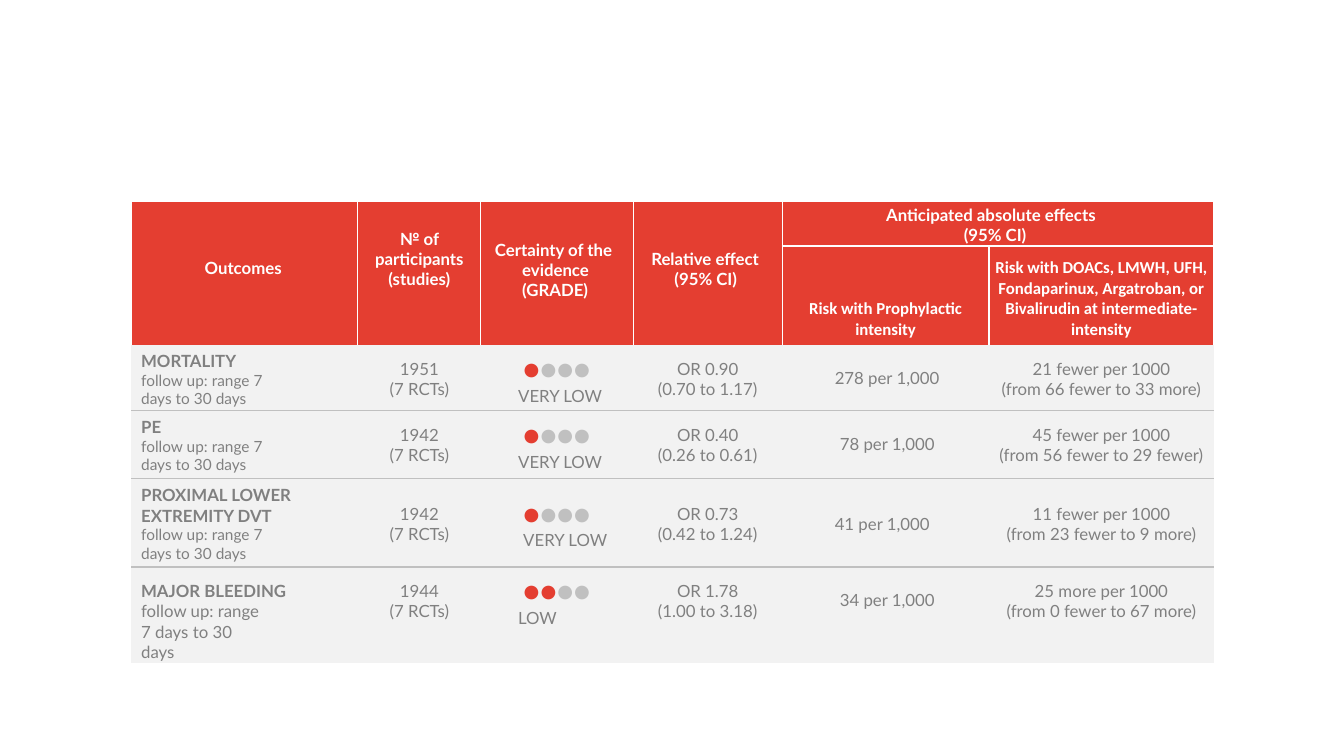
from dataclasses import dataclass
from typing import Optional

from lxml.etree import SubElement
from pptx import Presentation
from pptx.dml.color import RGBColor
from pptx.enum.text import MSO_ANCHOR as Anchor, PP_ALIGN as Align
from pptx.oxml.ns import qn
from pptx.table import Table, _Cell as Cell
from pptx.util import Inches, Pt

COLORS = {"white": "FFFFFF", "red": "E43E31", "band": "F2F2F2",
          "text": "808080", "rule": "C0C0C0"}
SLIDE_WIDTH, SLIDE_HEIGHT = Inches(13.33), Inches(7.5)
TABLE_LEFT, TABLE_TOP = 9.75, 26.67
COLUMN_SHARES = (16.88, 9.15, 11.33, 11.1, 15.38, 16.73)
ROW_SHARES = (5.87, 13.07, 8.73, 8.93, 11.73, 12.67)
NO_GRID_STYLE = "{2D5ABB26-0587-4C30-8999-92F81FD0307C}"
MAX_STARS = 4


@dataclass(frozen=True)
class Line:
    spans: tuple[tuple[str, str], ...]
    size: float = 12
    bold: bool = False
    font: str = "Lato"
    align: Align = Align.LEFT
    left: float = 0
    hang: float = 0
    right: float = 0


@dataclass(frozen=True)
class Header:
    row: int
    column: int
    text: str
    top: float
    last_row: int
    last_column: int
    align: Align = Align.LEFT
    left: float = 0
    hang: float = 0
    right: float = 0
    font: str = "Lato"
    inset: float = 0
    anchor: Anchor = Anchor.TOP


@dataclass(frozen=True)
class Outcome:
    name: str
    participants: str
    stars: int
    certainty: str
    effect: str
    interval: str
    baseline: str
    difference: str
    span: str
    name_top: float = 0.06
    pair_top: float = 0.14
    stars_top: float = 0.07
    baseline_top: float = 0.23
    baseline_left: float = 0.52
    certainty_left: float = 0.37
    follow_size: float = 11
    follow_right: float = 0.75


HEADERS = (
    Header(0, 0, "Outcomes", 0.56, 1, 0, left=0.73),
    Header(0, 1, "№ of participants (studies)", 0.27, 1, 1, Align.CENTER,
           left=0.1, right=0.1),
    Header(0, 2, "Certainty of the evidence (GRADE)", 0.38, 1, 2,
           left=0.41, hang=-0.27),
    Header(0, 3, "Relative effect (95% CI)", 0.47, 1, 3,
           left=0.41, hang=-0.23, right=0.1),
    Header(0, 4, "Anticipated absolute effects (95% CI)", 0.03, 0, 5,
           left=1.8, hang=-0.77, right=1),
    Header(1, 4, "Risk with Prophylactic intensity", 0.05, 1, 4, Align.CENTER,
           font="Calibri", inset=0.05, anchor=Anchor.BOTTOM),
    Header(1, 5, "Risk with DOACs, LMWH, UFH, Fondaparinux, Argatroban, or "
           "Bivalirudin at intermediate-intensity", 0.05, 1, 5, Align.CENTER,
           font="Calibri", inset=0.05, anchor=Anchor.BOTTOM),
)
OUTCOMES = (
    Outcome("MORTALITY", "1951", 1, "VERY LOW", "OR 0.90", "(0.70 to 1.17)",
            "278 per 1,000", "21 fewer per 1000", "(from 66 fewer to 33 more)"),
    Outcome("PE", "1942", 1, "VERY LOW", "OR 0.40", "(0.26 to 0.61)",
            "78 per 1,000", "45 fewer per 1000", "(from 56 fewer to 29 fewer)",
            baseline_left=0.57),
    Outcome("PROXIMAL LOWER EXTREMITY DVT", "1942", 1, "VERY LOW", "OR 0.73",
            "(0.42 to 1.24)", "41 per 1,000", "11 fewer per 1000",
            "(from 23 fewer to 9 more)", name_top=0.07, pair_top=0.25,
            stars_top=0.18, baseline_top=0.35, certainty_left=0.42),
    Outcome("MAJOR BLEEDING", "1944", 2, "LOW", "OR 1.78", "(1.00 to 3.18)",
            "34 per 1,000", "25 more per 1000", "(from 0 fewer to 67 more)",
            name_top=0.14, baseline_left=0.57, follow_size=12, follow_right=0.95),
)


def across(share: float) -> int:
    return round(SLIDE_WIDTH * share / 100)


def down(share: float) -> int:
    return round(SLIDE_HEIGHT * share / 100)


def color_of(name: str) -> RGBColor:
    return RGBColor.from_string(COLORS[name])


def style_cell(cell: Cell, fill: str, edges: str, edge_color: Optional[str],
               top: float = 0, inset: float = 0) -> None:
    cell.margin_left = cell.margin_right = cell.margin_bottom = Inches(inset)
    cell.margin_top = Inches(top)
    properties = cell._tc.get_or_add_tcPr()
    for edge in "LRTB":
        drawn = edge in edges and edge_color is not None
        border = SubElement(properties, qn(f"a:ln{edge}"), w=str(Pt(1) if drawn else 0))
        if drawn:
            paint = SubElement(border, qn("a:solidFill"))
            SubElement(paint, qn("a:srgbClr"), val=COLORS[edge_color])
        else:
            SubElement(border, qn("a:noFill"))
    cell.fill.solid()
    cell.fill.fore_color.rgb = color_of(fill)


def write_lines(cell: Cell, lines: tuple[Line, ...]) -> None:
    frame = cell.text_frame
    for index, line in enumerate(lines):
        para = frame.add_paragraph() if index else frame.paragraphs[0]
        para.alignment = line.align
        properties = para._p.get_or_add_pPr()
        for key, length in (("marL", line.left), ("marR", line.right), ("indent", line.hang)):
            properties.set(key, str(Inches(length)))
        para.font.name = line.font
        para.font.size = Pt(line.size)
        para.font.bold = line.bold
        for text, color in line.spans:
            span = para.add_run()
            span.text = text
            span.font.color.rgb = color_of(color)


def draw_header(table: Table, header: Header) -> None:
    cell = table.cell(header.row, header.column)
    last = table.cell(header.last_row, header.last_column)
    if last != cell and (header.row, header.column) != (header.last_row, header.last_column):
        cell.merge(last)
    for row in range(header.row, header.last_row + 1):
        for column in range(header.column, header.last_column + 1):
            style_cell(table.cell(row, column), "red", "LRTB" if header.row == header.last_row == 0
                       else "LRT", "white", header.top, header.inset)
    cell.vertical_anchor = header.anchor
    write_lines(cell, (Line(((header.text, "white"),), 12, True, header.font,
                            header.align, header.left, header.hang, header.right),))


def grey(text: str, **options) -> Line:
    return Line(((text, "text"),), **options)


def centered(*texts: str) -> tuple[Line, ...]:
    return tuple(grey(text, align=Align.CENTER) for text in texts)


def draw_outcome(table: Table, row: int, outcome: Outcome, ruled: bool) -> None:
    stars = Line((("●" * outcome.stars, "red"),
                  ("●" * (MAX_STARS - outcome.stars), "rule")), size=20, left=0.42)
    contents = (
        (outcome.name_top, (grey(outcome.name, bold=True, left=0.1),
                            grey("follow up: range 7 days to 30 days", left=0.1,
                                 size=outcome.follow_size, right=outcome.follow_right))),
        (outcome.pair_top, centered(outcome.participants, "(7 RCTs)")),
        (outcome.stars_top, (stars, grey(outcome.certainty, left=outcome.certainty_left))),
        (outcome.pair_top, centered(outcome.effect, outcome.interval)),
        (outcome.baseline_top, (grey(outcome.baseline, left=outcome.baseline_left),)),
        (outcome.pair_top, centered(outcome.difference, outcome.span)),
    )
    for column, (top, lines) in enumerate(contents):
        cell = table.cell(row, column)
        style_cell(cell, "band", "B" if ruled else "", "rule", top)
        write_lines(cell, lines)


def main() -> None:
    deck = Presentation()
    deck.slide_width, deck.slide_height = SLIDE_WIDTH, SLIDE_HEIGHT
    page = deck.slides.add_slide(deck.slide_layouts[6])
    table = page.shapes.add_table(
        len(ROW_SHARES), len(COLUMN_SHARES), across(TABLE_LEFT), down(TABLE_TOP),
        across(sum(COLUMN_SHARES)), down(sum(ROW_SHARES))).table
    table.first_row = table.horz_banding = False
    table._tbl.tblPr.find(qn("a:tableStyleId")).text = NO_GRID_STYLE
    for column, share in zip(table.columns, COLUMN_SHARES):
        column.width = across(share)
    for row, share in zip(table.rows, ROW_SHARES):
        row.height = down(share)
    for header in HEADERS:
        draw_header(table, header)
    for row, outcome in enumerate(OUTCOMES, start=2):
        draw_outcome(table, row, outcome, ruled=outcome is not OUTCOMES[-1])
    deck.save("out.pptx")


if __name__ == "__main__":
    main()
